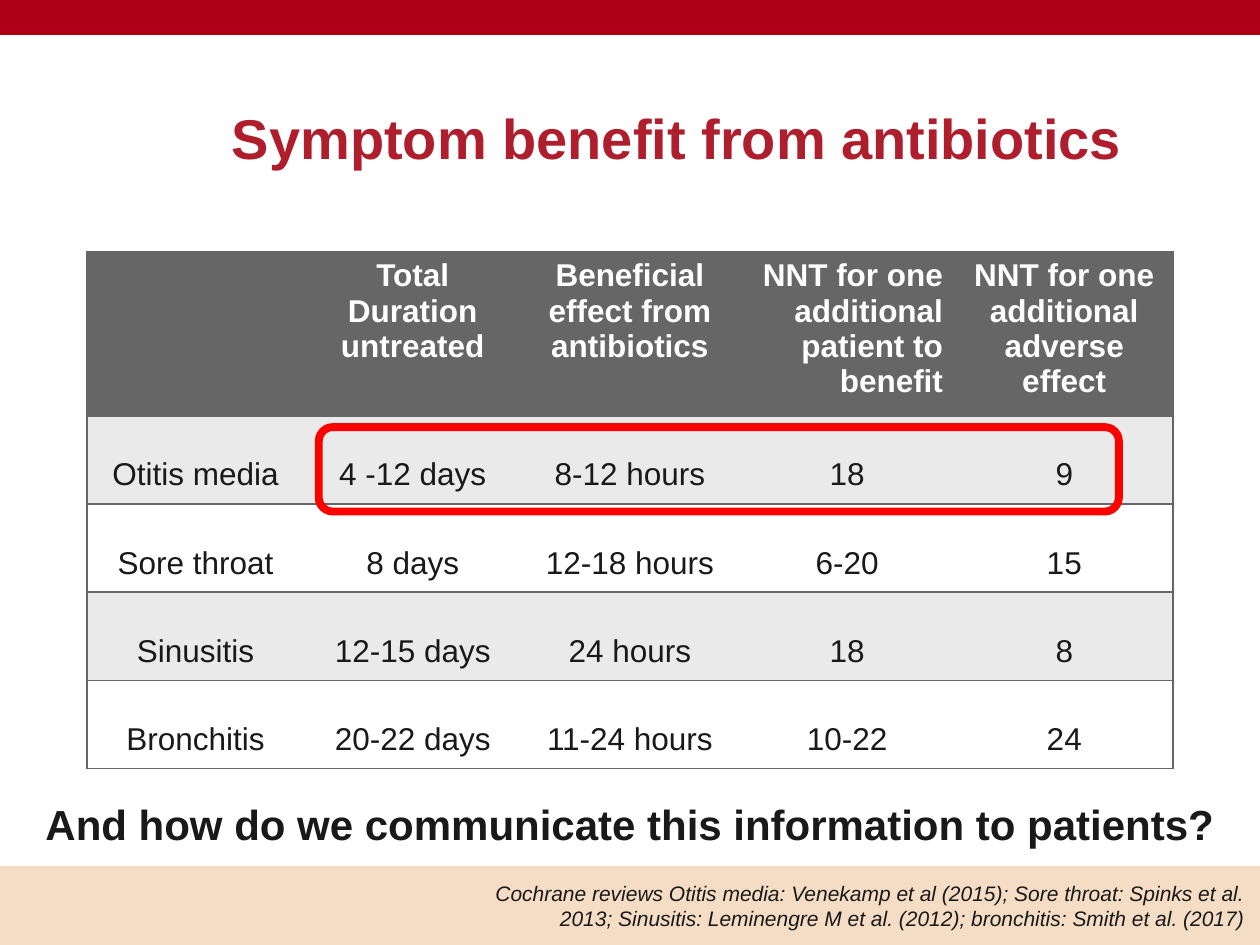
import pptx
import pptx.dml.color
import pptx.enum.shapes
import pptx.enum.text
import pptx.oxml
import pptx.oxml.ns
import pptx.util
from pptx.util import Inches

ALIGN = pptx.enum.text.PP_ALIGN
SHAPE = pptx.enum.shapes.MSO_SHAPE
GREY = "666666"
INK = "191919"
PLAIN_TABLE_STYLE = "{2D5ABB26-0587-4C30-8999-92F81FD0307C}"

HEADINGS = [
    "",
    "Total Duration untreated",
    "Beneficial effect from antibiotics",
    "NNT for one additional patient to benefit",
    "NNT for one additional adverse effect",
]
CONDITIONS = [
    ["Otitis media", "4 -12 days", "8-12 hours", "18", "9"],
    ["Sore throat", "8 days", "12-18 hours", "6-20", "15"],
    ["Sinusitis", "12-15 days", "24 hours", "18", "8"],
    ["Bronchitis", "20-22 days", "11-24 hours", "10-22", "24"],
]


def color(value):
    return pptx.dml.color.RGBColor.from_string(value)


def write_text(text_frame, text, size, text_color, align, spacing=1.0, **styles):
    paragraph = text_frame.paragraphs[0]
    paragraph.text = text
    paragraph.alignment = align
    paragraph.line_spacing = spacing
    font = paragraph.font
    values = {"name": "Arial", "size": pptx.util.Pt(size), "bold": False, **styles}
    for name, value in values.items():
        setattr(font, name, value)
    font.color.rgb = color(text_color)


def add_title(slide, text, box):
    title = slide.shapes.title
    for name, value in zip(("left", "top", "width", "height"), box):
        setattr(title, name, Inches(value))
    title.text_frame.vertical_anchor = pptx.enum.text.MSO_ANCHOR.MIDDLE
    write_text(title.text_frame, text, 32, "AF1E2C", ALIGN.LEFT, 0.9, bold=True)


def add_box(slide, kind, box, line_color, line_width, fill_color=None):
    shape = slide.shapes.add_shape(kind, *map(Inches, box))
    shape.shadow.inherit = False
    if fill_color:
        shape.fill.solid()
        shape.fill.fore_color.rgb = color(fill_color)
    else:
        shape.fill.background()
    shape.line.color.rgb = color(line_color)
    shape.line.width = pptx.util.Pt(line_width)


def add_text(slide, box, text, size, align, **styles):
    shape = slide.shapes.add_textbox(*map(Inches, box))
    shape.text_frame.word_wrap = True
    write_text(shape.text_frame, text, size, INK, align, **styles)


def add_borders(cell, sides):
    properties = cell._tc.get_or_add_tcPr()
    for position, side in enumerate(sides):
        border = pptx.oxml.parse_xml(
            f'<a:ln{side} {pptx.oxml.ns.nsdecls("a")} w="12700"><a:solidFill>'
            f'<a:srgbClr val="{GREY}"/></a:solidFill></a:ln{side}>'
        )
        properties.insert(position, border)


def add_benefit_table(slide, box):
    rows = [HEADINGS] + CONDITIONS
    frame = slide.shapes.add_table(len(rows), len(HEADINGS), *map(Inches, box))
    table = frame.table
    table._tbl.tblPr.find(pptx.oxml.ns.qn("a:tableStyleId")).text = PLAIN_TABLE_STYLE
    table.horz_banding = False
    last_column = len(HEADINGS) - 1
    for row_index, texts in enumerate(rows):
        header = row_index == 0
        table.rows[row_index].height = Inches(1.3 if header else 0.7)
        band = GREY if header else ("EAEAEA" if row_index % 2 else "FFFFFF")
        for column_index, text in enumerate(texts):
            cell = table.cell(row_index, column_index)
            cell.fill.solid()
            cell.fill.fore_color.rgb = color(band)
            outer_side = {0: "L", last_column: "R"}.get(column_index, "")
            add_borders(cell, outer_side + "TB")
            align = ALIGN.RIGHT if header and column_index == 3 else ALIGN.CENTER
            write_text(
                cell.text_frame,
                text,
                18,
                "FFFFFF" if header else INK,
                align,
                1.0 if header else 2.0,
                bold=header,
            )


def main():
    presentation = pptx.Presentation()
    presentation.slide_width = Inches(10)
    presentation.slide_height = Inches(7.5)
    slide = presentation.slides.add_slide(presentation.slide_layouts[5])

    add_box(slide, SHAPE.RECTANGLE, (0, 6.88, 10, 0.62), "F4DDC4", 1, "F4DDC4")
    add_box(slide, SHAPE.RECTANGLE, (0, -0.01, 10, 0.28), "AD0016", 1, "AD0016")
    add_title(slide, "Symptom benefit from antibiotics", (1.74, 0.4, 7.57, 1.45))
    add_benefit_table(slide, (0.69, 2, 8.62, 4.1))
    add_text(
        slide,
        (0, 6.29, 10, 0.51),
        "And how do we communicate this information to patients?",
        24,
        ALIGN.CENTER,
        bold=True,
    )
    add_text(
        slide,
        (3.44, 6.94, 6.54, 0.91),
        "Cochrane reviews Otitis media: Venekamp et al (2015); Sore throat: "
        "Spinks et al. 2013; Sinusitis: Leminengre M et al. (2012); "
        "bronchitis: Smith et al. (2017)",
        12,
        ALIGN.RIGHT,
        italic=True,
    )
    add_box(slide, SHAPE.ROUNDED_RECTANGLE, (2.53, 3.39, 6.35, 0.67), "FF0000", 4.5)
    presentation.save("out.pptx")


if __name__ == "__main__":
    main()
